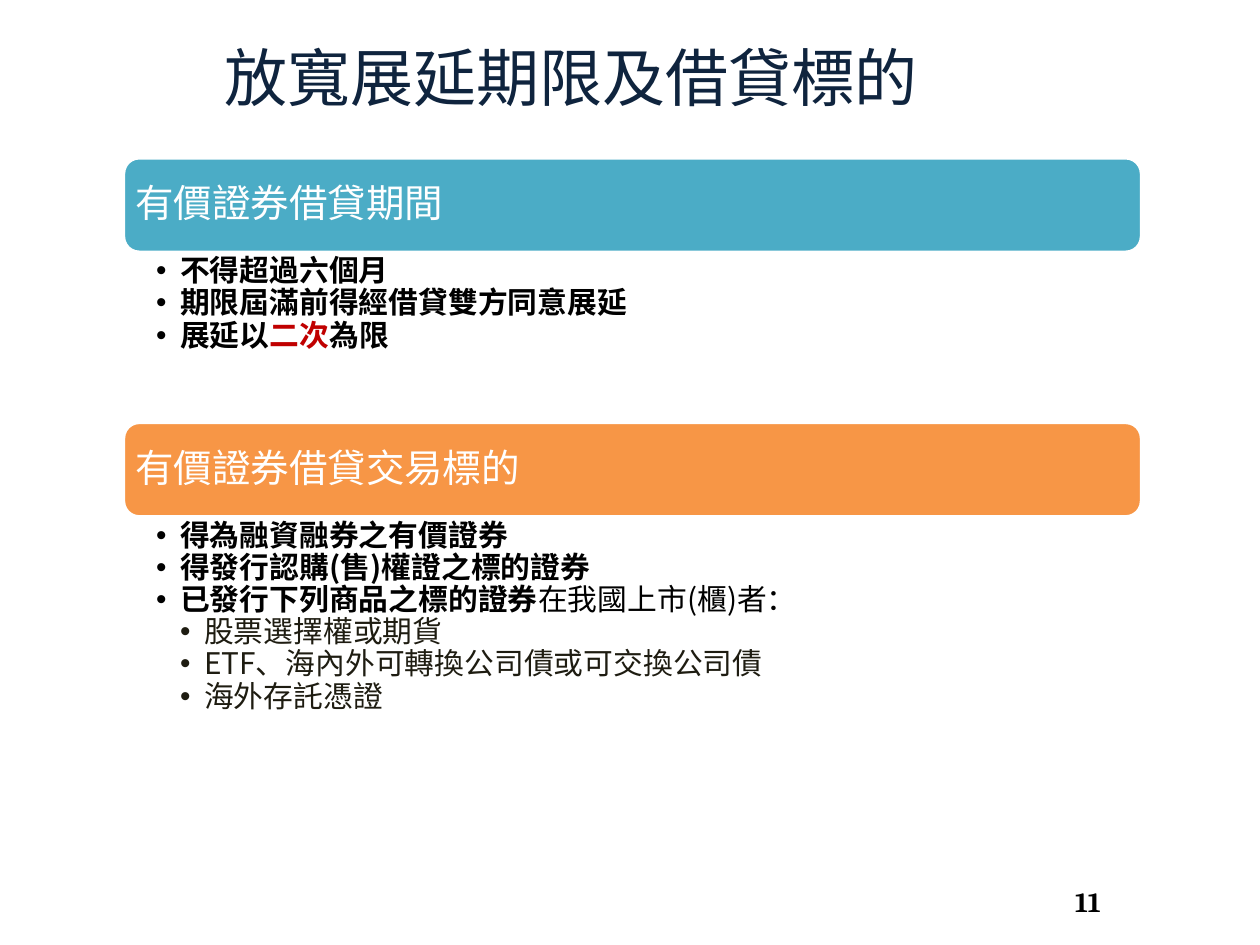
import pptx
import pptx.util
import pptx.dml.color
import pptx.enum.shapes
import pptx.enum.text
import pptx.oxml.ns
import lxml.etree

Color = pptx.dml.color.RGBColor
NAVY = Color(0x0F, 0x24, 0x3E)
TEAL = Color(0x4B, 0xAC, 0xC6)
ORANGE = Color(0xF7, 0x96, 0x46)
WHITE = Color(0xFF, 0xFF, 0xFF)
BLACK = Color(0, 0, 0)
RED = Color(0xC0, 0, 0)
DARK = Color(0x1E, 0x1C, 0x11)

SERIF = "Cambria"
SANS = "Noto Sans CJK SC"
ANCHOR = pptx.enum.text.MSO_ANCHOR
ALIGN = pptx.enum.text.PP_ALIGN

BOLD = {"size": 17, "name": SANS, "bold": True, "color": BLACK}
BOLD_RED = {**BOLD, "color": RED}
REGULAR = {**BOLD, "bold": False}
DETAIL = {**REGULAR, "color": DARK}
HEADING = {"size": 22, "name": SANS, "color": WHITE}
TITLE = {"size": 36, "name": SERIF, "color": NAVY}
NUMBER = {"size": 16, "name": SERIF, "bold": True, "color": BLACK}


class SlideBuilder:
    """Holds the deck, its current page and the shared text style."""

    step = pptx.util.Inches(0.19)
    line_spacing = 0.9

    def __init__(self, deck, layout):
        self.deck = deck
        self.page = deck.slides.add_slide(deck.slide_layouts[layout])

    def area(self, left, top, width, height):
        """Turn percentages of the slide into lengths."""
        wide, high = self.deck.slide_width, self.deck.slide_height
        return [round(share * side / 100) for share, side in
                zip((left, top, width, height), (wide, high, wide, high))]

    def place(self, box, area):
        box.left, box.top, box.width, box.height = self.area(*area)

    def frame(self, box, anchor, margins=(0.1, 0.05, 0.1, 0.05)):
        values = {"word_wrap": True, "vertical_anchor": anchor,
                  "auto_size": pptx.enum.text.MSO_AUTO_SIZE.NONE}
        for side, margin in zip(("left", "top", "right", "bottom"), margins):
            values["margin_" + side] = pptx.util.Inches(margin)
        for name, value in values.items():
            setattr(box.text_frame, name, value)
        return box.text_frame

    def add_span(self, para, text, style):
        span = para.add_run()
        span.text = text
        for name, value in style.items():
            if name == "color":
                span.font.color.rgb = value
            else:
                setattr(span.font, name, pptx.util.Pt(value) if name == "size" else value)
        east = lxml.etree.SubElement(span._r.get_or_add_rPr(), pptx.oxml.ns.qn("a:ea"))
        east.set("typeface", SANS)

    def label(self, box, text, style, align=ALIGN.CENTER):
        para = self.frame(box, ANCHOR.MIDDLE).paragraphs[0]
        para.alignment = align
        self.add_span(para, text, style)

    def title(self, area, text):
        box = self.page.shapes.title
        self.place(box, area)
        self.label(box, text, TITLE)

    def banner(self, area, text, color):
        box = self.page.shapes.add_shape(
            pptx.enum.shapes.MSO_SHAPE.ROUNDED_RECTANGLE, *self.area(*area))
        box.shadow.inherit = False
        box.fill.solid()
        box.fill.fore_color.rgb = color
        box.line.color.rgb = WHITE
        box.line.width = pptx.util.Pt(2)
        para = self.frame(box, ANCHOR.MIDDLE, (0.06,) * 4).paragraphs[0]
        para.alignment = ALIGN.LEFT
        para.line_spacing = self.line_spacing
        self.add_span(para, text, HEADING)

    def bullets(self, slot, area, items):
        box = self.page.placeholders[slot]
        self.place(box, area)
        frame = self.frame(box, ANCHOR.TOP, (0.26, 0.03, 0.17, 0.03))
        for index, (level, spans) in enumerate(items):
            para = frame.add_paragraph() if index else frame.paragraphs[0]
            props = para._p.get_or_add_pPr()
            props.set("marL", str(self.step * level))
            props.set("indent", str(-self.step))
            mark = lxml.etree.SubElement(props, pptx.oxml.ns.qn("a:buChar"))
            mark.set("char", "•")
            spacing = {"level": level, "line_spacing": self.line_spacing,
                       "space_before": pptx.util.Pt(0),
                       "space_after": pptx.util.Pt(0)}
            for name, value in spacing.items():
                setattr(para, name, value)
            for text, style in spans:
                self.add_span(para, text, style)

    def page_number(self, area, text):
        self.label(self.page.shapes.add_textbox(*self.area(*area)), text, NUMBER)


# Each section: heading, colour, top and list height in percent, list items
SECTIONS = [
    ("有價證券借貸期間", TEAL, 16.7, 17.9, [
        (1, [("不得超過六個月", BOLD)]),
        (1, [("期限屆滿前得經借貸雙方同意展延", BOLD)]),
        (1, [("展延以", BOLD), ("二次", BOLD_RED), ("為限", BOLD)]),
    ]),
    ("有價證券借貸交易標的", ORANGE, 44.7, 35.9, [
        (1, [("得為融資融券之有價證券", BOLD)]),
        (1, [("得發行認購(售)權證之標的證券", BOLD)]),
        (1, [("已發行下列商品之標的證券", BOLD), ("在我國上市(櫃)者：", REGULAR)]),
        (2, [("股票選擇權或期貨", DETAIL)]),
        (2, [("ETF、海內外可轉換公司債或可交換公司債", DETAIL)]),
        (2, [("海外存託憑證", DETAIL)]),
    ]),
]
LEFT, WIDTH, BANNER_HEIGHT = 9.8, 80.8, 10


def main():
    deck = pptx.Presentation()
    deck.slide_width = pptx.util.Inches(10)
    deck.slide_height = pptx.util.Inches(7.5)
    builder = SlideBuilder(deck, layout=3)

    # Title
    builder.title((13.8, 2.8, 63, 10.5), "放寬展延期限及借貸標的")

    # Banners with their lists
    for slot, (heading, color, top, height, items) in enumerate(SECTIONS, start=1):
        builder.banner((LEFT, top, WIDTH, BANNER_HEIGHT), heading, color)
        builder.bullets(slot, (LEFT, top + BANNER_HEIGHT, WIDTH, height), items)

    # Page number
    builder.page_number((74.7, 92.7, 23.3, 5.3), "11")
    deck.save("out.pptx")


if __name__ == "__main__":
    main()
